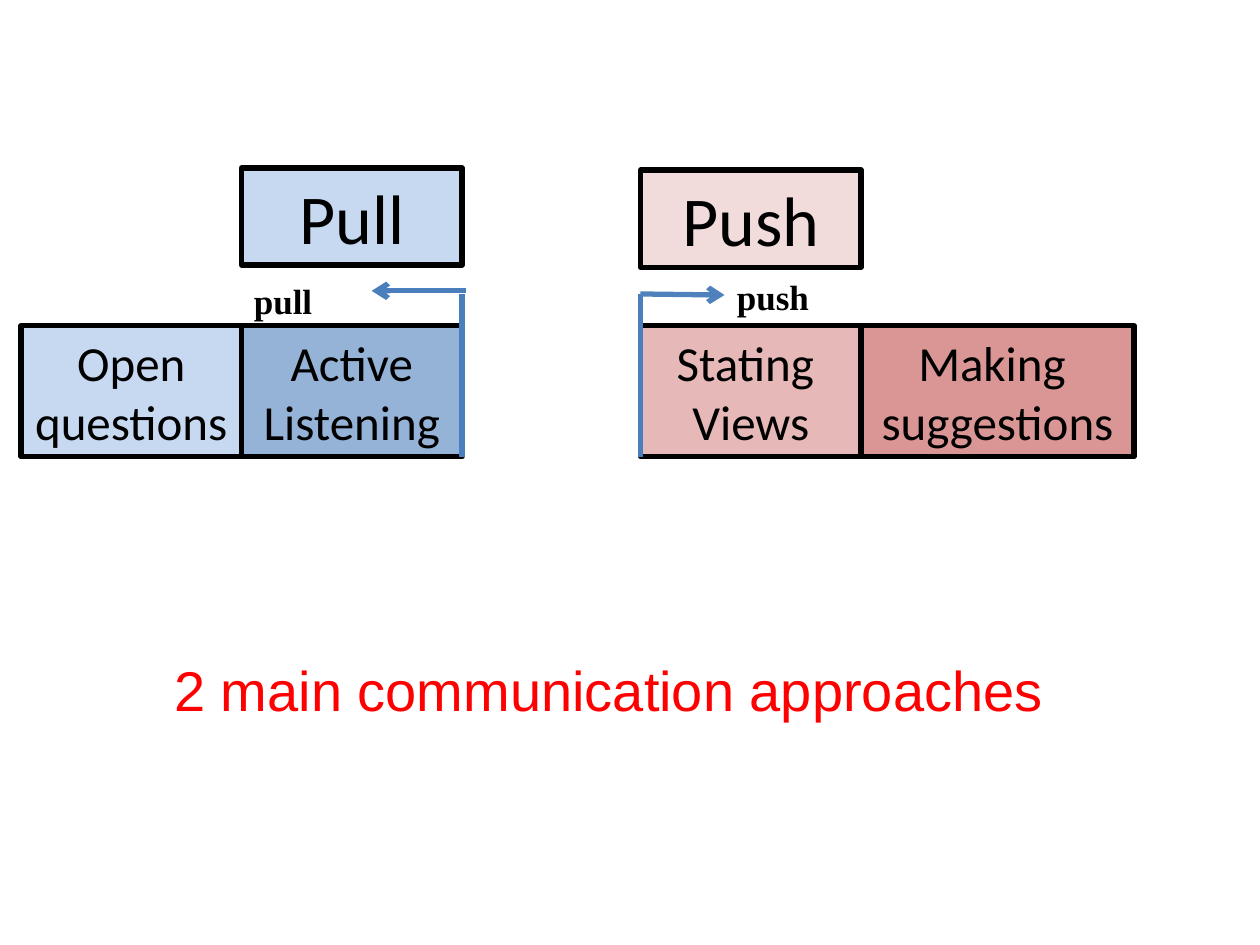
import pptx
import pptx.util
import pptx.dml.color
import pptx.enum.shapes
import pptx.enum.text
import pptx.oxml.ns
import lxml.etree

COLORS = {
    "ink": "000000", "red": "FF0000", "line": "4B7EBC", "arrow": "4F81BD",
    "sky": "C6D9F1", "blue": "95B3D7",
    "blush": "F2DCDB", "rose": "E6B9B8", "coral": "D99694",
}


def rgb(name):
    return pptx.dml.color.RGBColor.from_string(COLORS[name])


def write(frame, text, size=28, font="Calibri", color="ink", bold=False, center=True):
    frame.word_wrap = True
    frame.auto_size = pptx.enum.text.MSO_AUTO_SIZE.SHAPE_TO_FIT_TEXT
    frame.text = text
    align = pptx.enum.text.PP_ALIGN
    for para in frame.paragraphs:
        para.alignment = align.CENTER if center else align.LEFT
        for run in para.runs:
            run.font.size = pptx.util.Pt(size)
            run.font.name = font
            run.font.bold = bold
            run.font.color.rgb = rgb(color)


class Board:
    """Draws styled elements on a slide ruled into 120 columns and 90 rows."""

    def __init__(self, deck):
        self.slide = deck.slides.add_slide(deck.slide_layouts[6])
        self.col = deck.slide_width / 120
        self.row = deck.slide_height / 90
        self.weight = pptx.util.Pt(3)

    def place(self, x, y, w, h):
        return int(x * self.col), int(y * self.row), int(w * self.col), int(h * self.row)

    def box(self, text, x, y, w, h, fill, size=28):
        kind = pptx.enum.shapes.MSO_SHAPE.RECTANGLE
        shape = self.slide.shapes.add_shape(kind, *self.place(x, y, w, h))
        shape.shadow.inherit = False
        shape.fill.solid()
        shape.fill.fore_color.rgb = rgb(fill)
        shape.line.color.rgb = rgb("ink")
        shape.line.width = self.weight
        write(shape.text_frame, text, size=size)

    def label(self, text, x, y, w, h, **style):
        area = self.slide.shapes.add_textbox(*self.place(x, y, w, h))
        write(area.text_frame, text, **style)

    def rule(self, x1, y1, x2, y2, color="line", arrow=False):
        kind = pptx.enum.shapes.MSO_CONNECTOR.STRAIGHT
        line = self.slide.shapes.add_connector(kind, *self.place(x1, y1, x2, y2))
        line.line.color.rgb = rgb(color)
        line.line.width = self.weight
        qn = pptx.oxml.ns.qn
        props = line.element.spPr
        if arrow:
            lxml.etree.SubElement(props.find(qn("a:ln")), qn("a:tailEnd"), type="arrow")
        lxml.etree.SubElement(props, qn("a:effectLst"))


def main():
    deck = pptx.Presentation()
    deck.slide_width = pptx.util.Inches(10)
    deck.slide_height = pptx.util.Inches(7.5)
    board = Board(deck)

    board.box("Pull", 23, 16, 21, 9.25, "sky", size=40)
    board.box("Push", 61, 16.2, 21, 9.25, "blush", size=40)
    for text, x, wide, fill in (
        ("Active\nListening", 23, 21, "blue"),
        ("Open\nquestions", 2, 21, "sky"),
        ("Stating \nViews", 61, 21, "rose"),
        ("Making \nsuggestions", 82, 26, "coral"),
    ):
        board.box(text, x, 31, wide, 12.5, fill)

    for x in (44, 61):
        board.rule(x, 43.5, x, 28)
    board.rule(44.4, 27.7, 35.4, 27.7, arrow=True)
    board.rule(61, 28, 69, 28.1, color="arrow", arrow=True)

    for text, x, y in (("pull", 23, 26), ("push", 69, 25.6)):
        board.label(text, x, y, 10.6, 5.25, size=20,
                    font="Times New Roman", bold=True, center=False)
    board.label("2 main communication approaches", 14, 61.8, 88, 7.7,
                size=32, font="Arial", color="red")
    deck.save("out.pptx")


if __name__ == "__main__":
    main()
